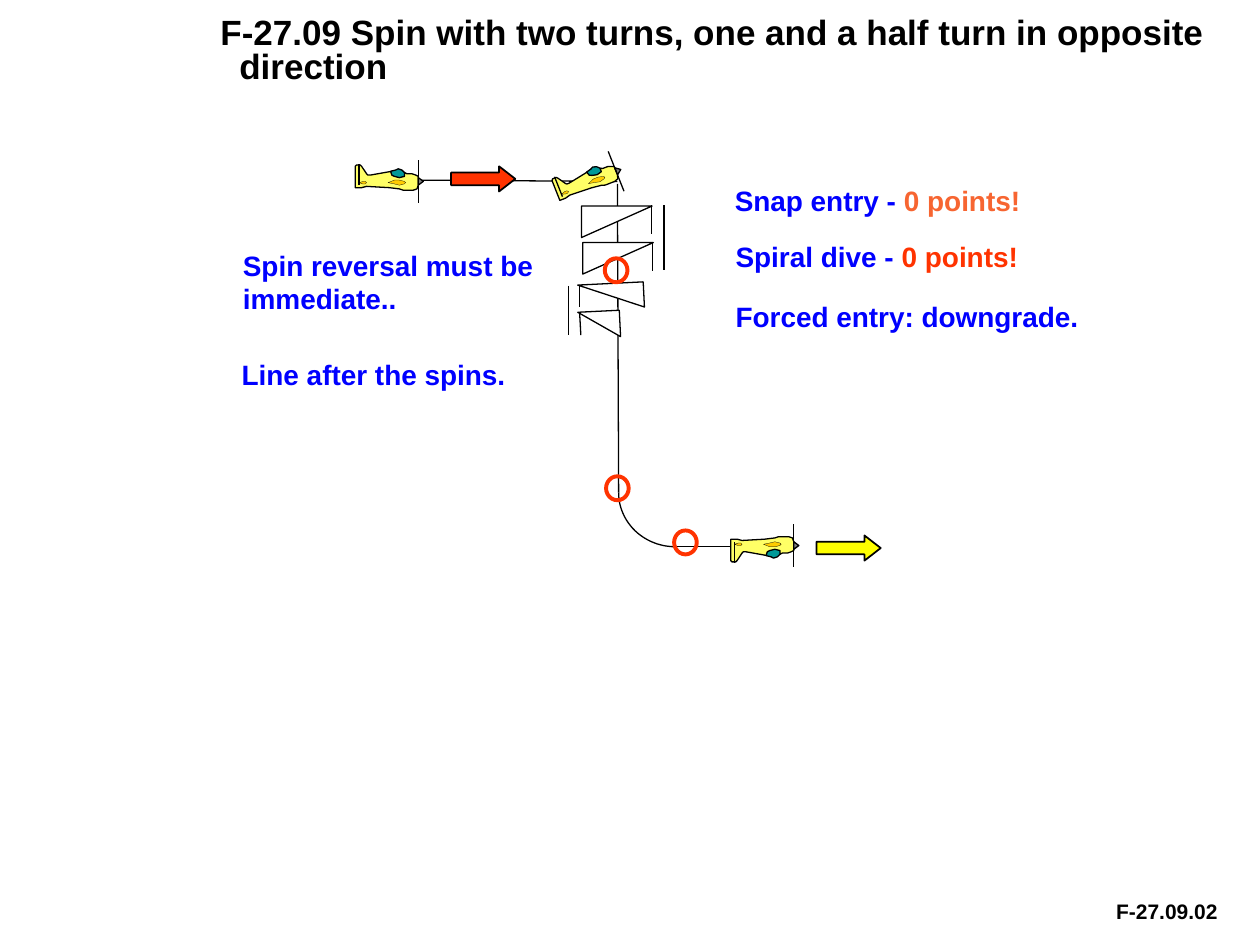
import math

import lxml.etree
import pptx
import pptx.dml.color
import pptx.enum.shapes
import pptx.enum.text
import pptx.oxml.ns
import pptx.util

Inches = pptx.util.Inches
SHAPES = pptx.enum.shapes.MSO_SHAPE
ALIGN = pptx.enum.text.PP_ALIGN

BLACK, WHITE, BLUE, RED, YELLOW = "000000", "FFFFFF", "0000FF", "FF3300", "FFFF00"

# Hundredths of an inch from the nose of a level plane flying right.
BODY = [(-11, -7), (-9, -6), (-5, -6), (-2, -5), (0, -4), (0, 3), (-1, 6), (-4, 7),
        (-12, 7), (-15, 6), (-23, 5), (-41, 4), (-45, 5), (-50, 5), (-50, 3), (-50, -12),
        (-49, -13), (-46, -13), (-45, -12), (-41, -6), (-40, -5), (-38, -5), (-21, -8),
        (-20, -5), (-15, -4), (-13, -4), (-11, -6)]
CANOPY = [(-22, -8), (-21, -5), (-19, -4), (-15, -3), (-11, -4), (-11, -7), (-13, -9),
          (-16, -10), (-18, -9)]
STRIPE = [(-24, 1), (-19, -1), (-15, -1), (-11, 0), (-10, 1), (-11, 2), (-15, 3), (-19, 2)]
TAIL_MARK = [(-47, 1), (-44, 2), (-42, 2), (-41, 1), (-42, 0), (-44, 0)]


def color(value):
    return pptx.dml.color.RGBColor.from_string(value)


class Sketch:
    """Draws the parts of a flight figure on one page in one style."""

    font, line_color, thin = "Arial", BLACK, 0.75

    def __init__(self, page):
        self.page = page
        self.shapes = page.shapes

    def start_group(self):
        self.shapes = self.page.shapes.add_group_shape().shapes

    def end_group(self):
        self.shapes = self.page.shapes

    def paint(self, shape, fill, line, width):
        shape.shadow.inherit = False
        if fill:
            shape.fill.solid()
            shape.fill.fore_color.rgb = color(fill)
        else:
            shape.fill.background()
        shape.line.color.rgb = color(line)
        shape.line.width = pptx.util.Pt(width)

    def text(self, left, top, width, height, spans, size=16, align=ALIGN.LEFT,
             spacing=None, hanging=0):
        box = self.shapes.add_textbox(*map(Inches, (left, top, width, height)))
        box.text_frame.word_wrap = True
        para = box.text_frame.paragraphs[0]
        para.alignment = align
        para.line_spacing = spacing
        if hanging:
            properties = para._p.get_or_add_pPr()
            properties.set("marL", str(Inches(hanging)))
            properties.set("indent", str(-Inches(hanging)))
        para.font.name, para.font.bold = self.font, True
        para.font.size = pptx.util.Pt(size)
        for words, shade in spans:
            span = para.add_run()
            span.text = words
            span.font.color.rgb = color(shade)
        return box

    def line(self, start, end):
        line = self.shapes.add_connector(
            pptx.enum.shapes.MSO_CONNECTOR.STRAIGHT, *map(Inches, (*start, *end)))
        line.line.color.rgb = color(self.line_color)
        line.line.width = pptx.util.Pt(self.thin)
        lxml.etree.SubElement(line._element.spPr, pptx.oxml.ns.qn("a:effectLst"))

    def shape(self, kind, left, top, width, height, fill=None, line=BLACK,
              weight=0.75, rotation=0, flip=False):
        shape = self.shapes.add_shape(kind, *map(Inches, (left, top, width, height)))
        self.paint(shape, fill, line, weight)
        shape.rotation = rotation
        if flip:
            shape._element.spPr.get_or_add_xfrm().set("flipH", "1")
        return shape

    def outline(self, points, fill=None, width=0.75, close=True):
        corners = [(Inches(x), Inches(y)) for x, y in points]
        builder = self.shapes.build_freeform(*corners[0])
        builder.add_line_segments(corners[1:], close=close)
        self.paint(builder.convert_to_shape(), fill, self.line_color, width)

    def arrow(self, left, top, fill):
        arrow = self.shape(SHAPES.RIGHT_ARROW, left, top, 0.51, 0.2, fill, weight=1)
        arrow.adjustments[1] = 0.645

    def plane(self, nose_x, nose_y, climb=0, inverted=False):
        cosine, sine = math.cos(math.radians(climb)), math.sin(math.radians(climb))
        side = -1 if inverted else 1

        def place(point):
            x, y = point[0] / 100, side * point[1] / 100
            return nose_x + x * cosine + y * sine, nose_y - x * sine + y * cosine

        self.start_group()
        self.line(place((0, 17)), place((0, 0)))
        for points, fill, width in ((BODY, "FFFF66", 0.75), (CANOPY, "009999", 0.75),
                                    (STRIPE, "FFCC00", 0.13), (TAIL_MARK, "FFCC00", 0.13)):
            self.outline([place(point) for point in points], fill, width)
        self.line(place((-47, 3)), place((-47, -14)))
        x, y = place((2, 0))
        self.shape(SHAPES.ISOSCELES_TRIANGLE, x - 0.03, y - 0.02, 0.06, 0.04, "808080",
                   rotation=90 - climb)
        self.line(place((0, 0)), place((0, -17)))
        self.end_group()

    def turn(self, line_start, line_end, triangle, rotation, flip=False):
        self.line(line_start, line_end)
        self.shape(SHAPES.RIGHT_TRIANGLE, *triangle, WHITE, rotation=rotation, flip=flip)


def main():
    deck = pptx.Presentation()
    deck.slide_width, deck.slide_height = Inches(10), Inches(7.5)
    sketch = Sketch(deck.slides.add_slide(deck.slide_layouts[6]))

    title = sketch.text(
        1.66, 0.11, 8.3, 1.16,
        [("F-27.09 Spin with two turns, one and a half turn in opposite direction", BLACK)],
        size=20, spacing=0.8, hanging=0.15)
    frame = title.text_frame
    frame.margin_left = frame.margin_right = Inches(0.09)
    frame.margin_top = frame.margin_bottom = Inches(0.04)
    sketch.text(8.76, 7.12, 1.03, 0.26, [("F-27.09.02", BLACK)], size=12, spacing=0.8)

    sketch.plane(6.3, 4.33, inverted=True)
    sketch.arrow(6.48, 4.25, YELLOW)
    sketch.line((3.34, 1.43), (4.9, 1.44))
    sketch.line((4.9, 1.46), (4.91, 3.91))
    angles = [math.radians(90 * step / 24) for step in range(25)]
    sketch.outline([(5.36 - 0.45 * math.cos(angle), 3.91 + 0.43 * math.sin(angle))
                    for angle in angles], close=False)
    sketch.line((5.36, 4.34), (5.79, 4.34))
    sketch.plane(3.32, 1.44)
    sketch.arrow(3.58, 1.32, RED)
    sketch.plane(4.89, 1.36, climb=21.6)

    for start, end, triangle in (((4.6, 2.26), (4.6, 2.44), (4.75, 2.09, 0.2, 0.52)),
                                 ((4.6, 2.48), (4.61, 2.66), (4.65, 2.41, 0.21, 0.33))):
        sketch.start_group()
        sketch.turn(start, end, triangle, 267.2, flip=True)
        sketch.end_group()
    sketch.line((4.51, 2.27), (4.51, 2.66))

    sketch.start_group()
    for x, y in ((5.17, 1.63), (5.18, 1.92)):
        sketch.turn((x, y), (x, y + 0.23), (x - 0.4, y - 0.15, 0.25, 0.56), 90)
    sketch.line((5.27, 1.63), (5.27, 2.14))
    sketch.end_group()

    sketch.text(5.74, 2.33, 3.57, 0.37, [("Forced entry: downgrade.", BLUE)])
    sketch.text(5.74, 1.85, 3.57, 0.37, [("Spiral dive - ", BLUE), ("0 points!", RED)])
    sketch.text(5.18, 1.41, 3.57, 0.37, [("Snap entry - ", BLUE), ("0 points!", "F76531")],
                align=ALIGN.CENTER)
    sketch.text(1.82, 2.79, 3.57, 0.37, [("Line after the spins.", BLUE)])
    sketch.text(1.83, 1.92, 2.63, 0.64, [("Spin reversal must be immediate..", BLUE)])

    for left, top in ((4.8, 2.05), (5.35, 4.21), (4.81, 3.78)):
        sketch.shape(SHAPES.OVAL, left, top, 0.18, 0.19, line=RED, weight=2.25)

    deck.save("out.pptx")


if __name__ == "__main__":
    main()
